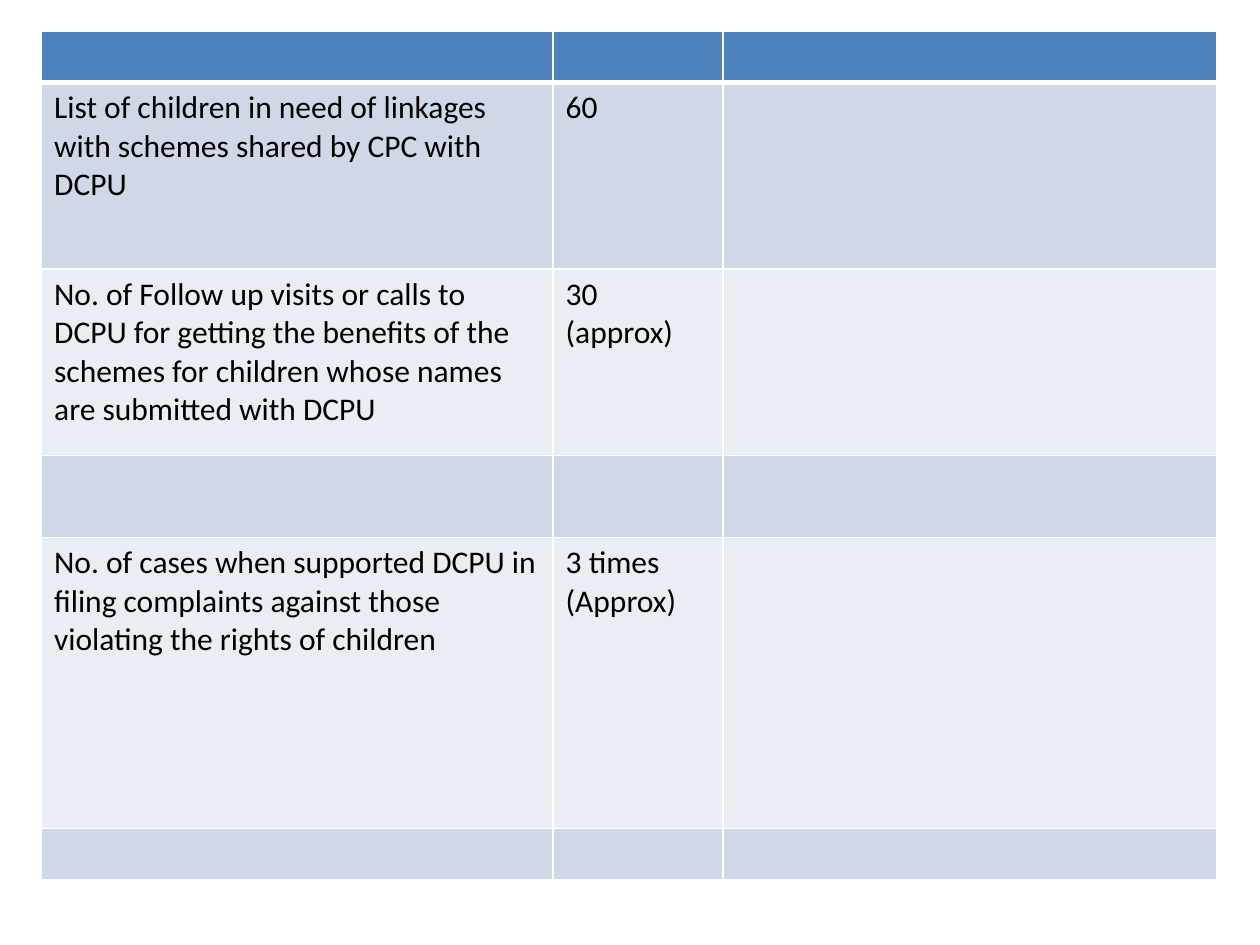
import pptx
import pptx.dml.color
import pptx.oxml
import pptx.oxml.ns
import pptx.util
from collections import namedtuple
from dataclasses import dataclass

Box = namedtuple("Box", "left top width height")


@dataclass(frozen=True)
class Theme:
    font: str = "Calibri"
    body_size: int = 18
    text: str = "000000"
    header: str = "4F81BD"
    bands: tuple = ("D0D8E8", "E9EDF4")
    border: str = "FFFFFF"
    border_width: int = 1
    header_rule_width: int = 3


THEME = Theme()
SLIDE_WIDTH, SLIDE_HEIGHT = 10, 7.5
TABLE_BOX = Box(0.33, 0.25, 9.33, 6.72)
COLUMN_WEIGHTS = (4.06, 1.35, 3.92)
ROW_WEIGHTS = (0.4, 1.48, 1.48, 0.65, 2.31, 0.4)
ROWS = (
    ("", "", ""),
    ("List of children in need of linkages with schemes shared by CPC with DCPU", "60", ""),
    ("No. of Follow up visits or calls to DCPU for getting the benefits of the schemes "
     "for children whose names are submitted with DCPU", "30 (approx)", ""),
    ("", "", ""),
    ("No. of cases when supported DCPU in filing complaints against those violating "
     "the rights of children", "3 times (Approx)", ""),
    ("", "", ""),
)


def share_out(length, weights):
    return [pptx.util.Inches(length * weight / sum(weights)) for weight in weights]


def set_borders(cell, widths):
    """Draw the cell's sides; widths maps L, R, T and B to points."""
    properties = cell._tc.get_or_add_tcPr()
    for side, width in widths.items():
        properties.append(pptx.oxml.parse_xml(
            f'<a:ln{side} {pptx.oxml.ns.nsdecls("a")} w="{pptx.util.Pt(width)}">'
            f'<a:solidFill><a:srgbClr val="{THEME.border}"/></a:solidFill></a:ln{side}>'))


def write_text(cell, text):
    span = cell.text_frame.paragraphs[0].add_run()
    span.text = text
    formats = {"name": THEME.font, "size": pptx.util.Pt(THEME.body_size), "bold": False}
    for name, value in formats.items():
        setattr(span.font, name, value)
    span.font.color.rgb = pptx.dml.color.RGBColor.from_string(THEME.text)


def format_cell(cell, row_index):
    widths = dict.fromkeys("LRTB", THEME.border_width)
    if row_index == 0:
        widths["B"] = THEME.header_rule_width
        colour = THEME.header
    else:
        if row_index == 1:
            widths["T"] = THEME.header_rule_width
        colour = THEME.bands[(row_index - 1) % len(THEME.bands)]
    set_borders(cell, widths)
    cell.fill.solid()
    cell.fill.fore_color.rgb = pptx.dml.color.RGBColor.from_string(colour)


def add_activity_table(page, box):
    place = [pptx.util.Inches(length) for length in box]
    table = page.shapes.add_table(len(ROWS), len(COLUMN_WEIGHTS), *place).table
    for column, width in zip(table.columns, share_out(box.width, COLUMN_WEIGHTS)):
        column.width = width
    for row, height in zip(table.rows, share_out(box.height, ROW_WEIGHTS)):
        row.height = height
    for row_index, texts in enumerate(ROWS):
        for column_index, text in enumerate(texts):
            cell = table.cell(row_index, column_index)
            format_cell(cell, row_index)
            if text:
                write_text(cell, text)


def main():
    deck = pptx.Presentation()
    deck.slide_width = pptx.util.Inches(SLIDE_WIDTH)
    deck.slide_height = pptx.util.Inches(SLIDE_HEIGHT)
    page = deck.slides.add_slide(deck.slide_layouts.get_by_name("Blank"))
    add_activity_table(page, TABLE_BOX)
    deck.save("out.pptx")


if __name__ == "__main__":
    main()
